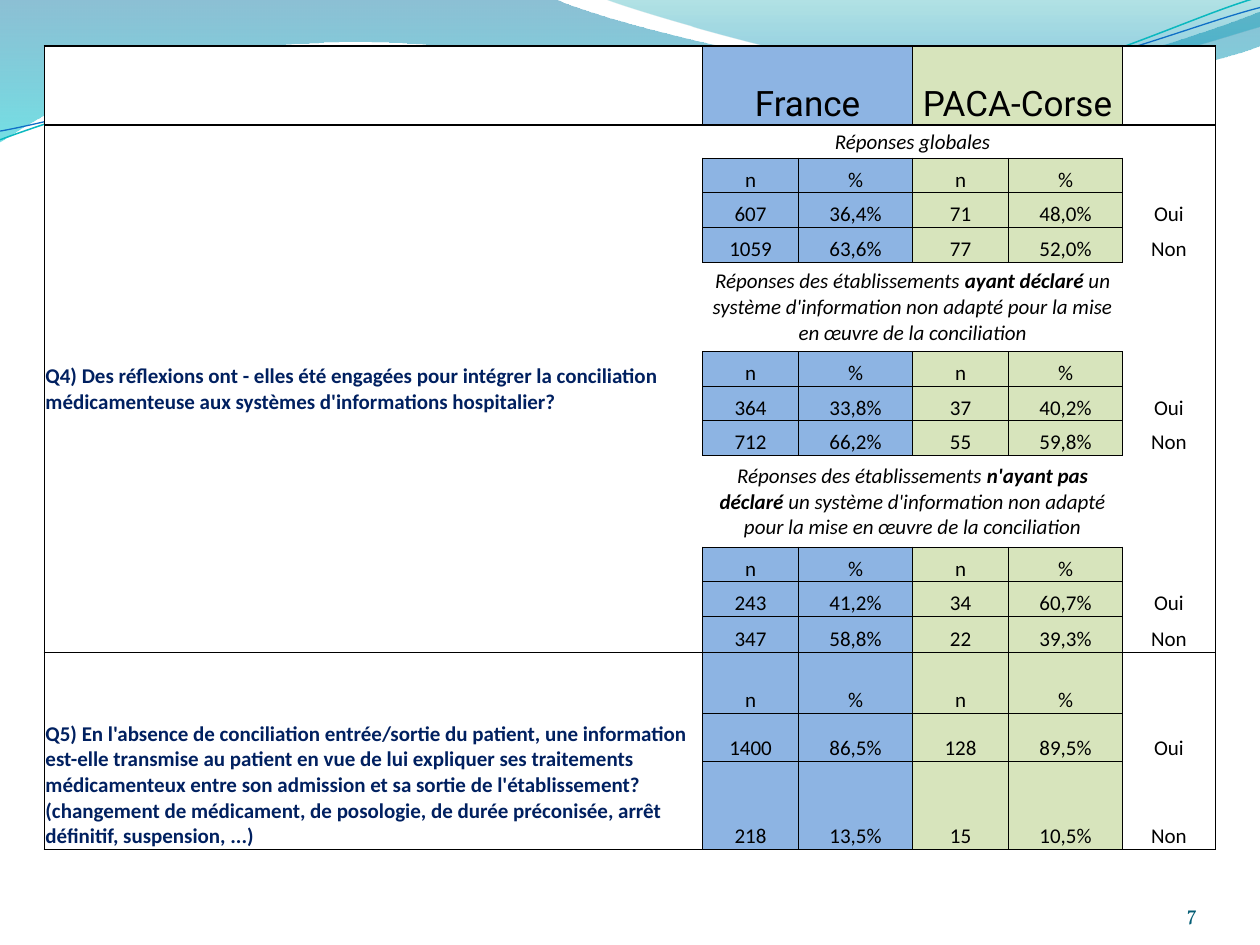
from dataclasses import dataclass

from lxml import etree
from pptx import Presentation
from pptx import util as u
from pptx.dml import color as dml
from pptx.enum import text as t
from pptx.oxml import ns

Pt = u.Pt
COLORS = {
    "black": "000000", "white": "FFFFFF", "question": "002060",
    "france": "8DB4E3", "paca": "D7E4BC", "page": "045D75",
    "deep": "0074A1", "cyan": "00C6CF", "teal": "00A1A9", "blue": "008BBF",
    "teal_line": "0AB8BF", "blue_line": "0F6FC6",
}
NO_STYLE = "{2D5ABB26-0587-4C30-8999-92F81FD0307C}"
THIN, THICK = 0.5, 1
ROW = 19.85
COLUMN_WIDTHS = [376.2, 54.8, 65.2, 54.8, 65.2, 53]
ROW_HEIGHTS = [45.2, 18.9, *[ROW] * 4, 31.2, *[ROW] * 4, 32.4,
               ROW, ROW, 20.6, 34.8, 27.4, 50.3]
LAST_COL = len(COLUMN_WIDTHS) - 1
SECTION_TOPS, SECTION_ENDS = (0, 1, 15), (0, 14, 17)


@dataclass
class Wave:
    """Points are in pt: a pair is a line, six numbers are a Bezier curve."""
    start: tuple
    segments: list
    stops: tuple = ()  # (position, colour, opacity)
    line: str = ""
    weight: float = 0


@dataclass
class AnswerBlock:
    first_row: int
    yes: list
    no: list


@dataclass
class Heading:
    row: int
    row_span: int
    runs: list  # (text, bold)


@dataclass
class Question:
    row: int
    row_span: int
    wording: str
    anchor: t.MSO_ANCHOR
    edges: dict


WAVES = [
    Wave((0, 0), [(316.8, -0.7), (342.7, 12.2, 478.1, 45.4, 545.8, 45.4),
                  (614.2, 45.4, 689.8, 18.7, 720, 6.5), (720.7, 25.9),
                  (707.8, 31.7, 626.4, 54.7, 537.1, 54),
                  (447.8, 54, 275, 20.2, 185, 24.5),
                  (92.9, 25.9, 33.1, 59.8, -0.7, 81.4), (0, 0)],
         stops=((0, "deep", 45), (1, "cyan", 55))),
    Wave((344.9, -0.7), [(366.5, 7.9, 491, 44.6, 553.7, 46.8),
                         (616.3, 49.7, 691.9, 23, 720, 15.1), (720, 0), (344.9, -0.7)],
         stops=((0, "teal", 30), (0.8, "blue", 45))),
    Wave((0, 79.9), [(34.6, 67, 113.8, 41, 199.4, 37.4),
                     (284.4, 33.8, 427, 64.1, 513.4, 57.6),
                     (599.8, 51.1, 675.4, 10.8, 718.6, -1.4)],
         line="teal_line", weight=0.85),
    Wave((0, 74.9), [(33.8, 69.1, 118.1, 43.9, 203.8, 40.3),
                     (290.2, 36.7, 429.8, 60.5, 516.2, 54),
                     (601.9, 48.2, 677.5, 15.1, 720, 4.3)],
         line="blue_line", weight=0.75),
]
REPLIES = "Réponses des établissements "
UNSUITED = " un système d'information non adapté pour la mise en œuvre de la conciliation"
HEADINGS = [
    Heading(1, 1, [("Réponses globales", False)]),
    Heading(5, 2, [(REPLIES, False), ("ayant déclaré", True), (UNSUITED, False)]),
    Heading(10, 2, [(REPLIES, False), ("n'ayant pas déclaré", True), (UNSUITED, False)]),
]
ANSWERS = [
    AnswerBlock(2, ["607", "36,4%", "71", "48,0%"], ["1059", "63,6%", "77", "52,0%"]),
    AnswerBlock(7, ["364", "33,8%", "37", "40,2%"], ["712", "66,2%", "55", "59,8%"]),
    AnswerBlock(12, ["243", "41,2%", "34", "60,7%"], ["347", "58,8%", "22", "39,3%"]),
    AnswerBlock(15, ["1400", "86,5%", "128", "89,5%"], ["218", "13,5%", "15", "10,5%"]),
]
QUESTIONS = [
    Question(1, 14, "Q4) Des réflexions ont - elles été engagées pour intégrer la conciliation "
             "médicamenteuse aux systèmes d'informations hospitalier?",
             t.MSO_ANCHOR.MIDDLE, dict(L=THICK, T=THICK, B=THICK)),
    Question(15, 3, "Q5) En l'absence de conciliation entrée/sortie du patient, une information "
             "est-elle transmise au patient en vue de lui expliquer ses traitements médicamenteux "
             "entre son admission et sa sortie de l'établissement? (changement de médicament, de "
             "posologie, de durée préconisée, arrêt définitif, suspension, ...)",
             t.MSO_ANCHOR.BOTTOM, dict(L=THICK, T=THICK, R=THIN, B=THICK)),
]


def rgb(name: str) -> dml.RGBColor:
    return dml.RGBColor.from_string(COLORS[name])


def write_text(frame, runs, *, size=12, font="Calibri", color="black", bold=False,
               italic=False, align=t.PP_ALIGN.CENTER) -> None:
    paragraph = frame.paragraphs[0]
    paragraph.alignment = align
    for wording, strong in [(runs, bold)] if isinstance(runs, str) else runs:
        run = paragraph.add_run()
        run.text = wording
        run.font.size, run.font.name = Pt(size), font
        run.font.bold, run.font.italic = strong, italic
        run.font.color.rgb = rgb(color)


def bend_segments(ribbon, segments: list) -> None:
    """Join the three line steps of each curve into one Bezier step."""
    steps = iter(list(ribbon._element.iter(ns.qn("a:lnTo"))))
    for segment in segments:
        step = next(steps)
        if len(segment) == 6:
            step.addprevious(curve := etree.Element(ns.qn("a:cubicBezTo")))
            for control in (step, next(steps), next(steps)):
                curve.append(control[0])
                control.getparent().remove(control)


def draw_wave(slide, wave: Wave) -> None:
    points = [(Pt(s[i]), Pt(s[i + 1])) for s in wave.segments for i in range(0, len(s), 2)]
    builder = slide.shapes.build_freeform(*map(Pt, wave.start))
    builder.add_line_segments(points, close=bool(wave.stops))
    ribbon = builder.convert_to_shape()
    bend_segments(ribbon, wave.segments)
    ribbon.shadow.inherit = False
    if wave.line:
        ribbon.fill.background()
        ribbon.line.color.rgb, ribbon.line.width = rgb(wave.line), Pt(wave.weight)
        return
    ribbon.line.fill.background()
    ribbon.fill.gradient()
    ribbon.fill.gradient_angle = 270
    for stop, (position, color, _) in zip(ribbon.fill.gradient_stops, wave.stops):
        stop.position, stop.color.rgb = position, rgb(color)
    tints = ribbon._element.spPr.iter(ns.qn("a:srgbClr"))
    for tint, (_, _, opacity) in zip(tints, wave.stops):
        etree.SubElement(tint, ns.qn("a:alpha"), val=str(opacity * 1000))


def format_cell(cell, edges: dict, *, fill="white", anchor=t.MSO_ANCHOR.BOTTOM) -> None:
    cell.vertical_anchor = anchor
    properties = cell._tc.get_or_add_tcPr()
    for side in "LRTB":
        width = edges.get(side, 0)
        border = etree.SubElement(properties, ns.qn(f"a:ln{side}"), w=str(Pt(width)))
        if width:
            solid = etree.SubElement(border, ns.qn("a:solidFill"))
            etree.SubElement(solid, ns.qn("a:srgbClr"), val=COLORS["black"])
        else:
            etree.SubElement(border, ns.qn("a:noFill"))
    cell.fill.solid()
    cell.fill.fore_color.rgb = rgb(fill)


def section_edges(row: int, inner: float) -> dict:
    return dict(T=THICK if row in SECTION_TOPS else inner,
                B=THICK if row in SECTION_ENDS else inner)


def fill_row(table, row: int, values: list, label: str) -> None:
    for col, value in enumerate(values, start=1):
        cell = table.cell(row, col)
        format_cell(cell, dict(L=THIN, R=THIN, **section_edges(row, THIN)),
                    fill="france" if col < 3 else "paca")
        write_text(cell.text_frame, value)
    if label:
        write_text(table.cell(row, LAST_COL).text_frame, label)


def draw_table(slide) -> None:
    frame = slide.shapes.add_table(len(ROW_HEIGHTS), len(COLUMN_WIDTHS), Pt(25.3), Pt(26.2),
                                   Pt(sum(COLUMN_WIDTHS)), Pt(sum(ROW_HEIGHTS)))
    table = frame.table
    table.first_row = table.horz_banding = False
    table._tbl.tblPr.find(ns.qn("a:tableStyleId")).text = NO_STYLE
    for column, width in zip(table.columns, COLUMN_WIDTHS):
        column.width = Pt(width)
    for row, height in zip(table.rows, ROW_HEIGHTS):
        row.height = Pt(height)
    for cell in table.iter_cells():
        cell.margin_left = cell.margin_right = cell.margin_top = Pt(0.7)
        cell.margin_bottom = 0
        cell.text_frame.paragraphs[0]._p.get_or_add_endParaRPr().set("sz", "1200")

    # Header row
    format_cell(table.cell(0, 0), dict(L=THICK, R=THIN, T=THICK, B=THICK))
    for col, region, fill in ((1, "France", "france"), (3, "PACA-Corse", "paca")):
        cell = table.cell(0, col)
        cell.merge(table.cell(0, col + 1))
        format_cell(cell, dict(L=THIN, R=THIN, T=THICK, B=THICK), fill=fill)
        write_text(cell.text_frame, region, size=20, font="Roboto")

    # Questions, group headings and the frame of the label column
    for question in QUESTIONS:
        end = question.row + question.row_span
        cell = table.cell(question.row, 0)
        cell.merge(table.cell(end - 1, 0))
        for row in range(question.row, end):
            format_cell(table.cell(row, 0), question.edges, anchor=question.anchor)
        write_text(cell.text_frame, question.wording, color="question", bold=True,
                   align=t.PP_ALIGN.LEFT)
    heading_rows = set()
    for heading in HEADINGS:
        end = heading.row + heading.row_span
        heading_rows.update(range(heading.row, end))
        cell = table.cell(heading.row, 1)
        cell.merge(table.cell(end - 1, 4))
        format_cell(cell, dict(T=THICK if heading.row == 1 else THIN, B=THIN),
                    anchor=t.MSO_ANCHOR.MIDDLE)
        write_text(cell.text_frame, heading.runs, italic=True)
    for row in range(len(ROW_HEIGHTS)):
        left = 0 if row in heading_rows else THIN
        format_cell(table.cell(row, LAST_COL), dict(L=left, R=THICK, **section_edges(row, 0)))

    # Answers
    for block in ANSWERS:
        lines = ((["n", "%"] * 2, ""), (block.yes, "Oui"), (block.no, "Non"))
        for offset, (values, label) in enumerate(lines):
            fill_row(table, block.first_row + offset, values, label)


def draw_page_number(slide) -> None:
    frame = slide.shapes.add_textbox(Pt(624), Pt(500.4), Pt(60), Pt(28.8)).text_frame
    frame.word_wrap = True
    frame.margin_left = frame.margin_right = frame.margin_top = frame.margin_bottom = 0
    frame.vertical_anchor = t.MSO_ANCHOR.BOTTOM
    write_text(frame, "7", font="Vollkorn", color="page", align=t.PP_ALIGN.RIGHT)


def main() -> None:
    deck = Presentation()
    deck.slide_width, deck.slide_height = Pt(720), Pt(540)
    slide = deck.slides.add_slide(deck.slide_layouts[6])
    for wave in WAVES:
        draw_wave(slide, wave)
    draw_table(slide)
    draw_page_number(slide)
    deck.save("out.pptx")


if __name__ == "__main__":
    main()
